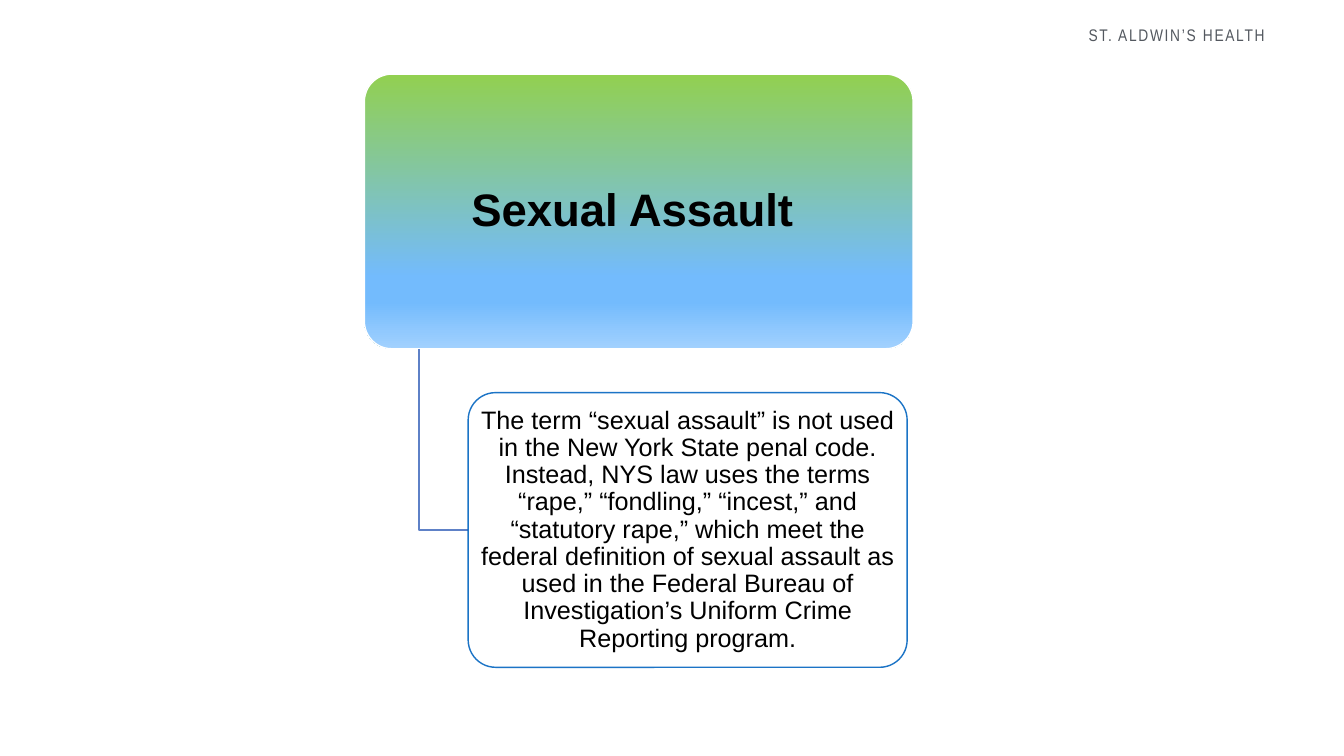
from dataclasses import dataclass

from lxml import etree
from pptx import Presentation
from pptx import util as u
from pptx.dml.color import RGBColor
from pptx.enum import shapes, text
from pptx.oxml.ns import qn


@dataclass(frozen=True)
class Theme:
    black: str = "000000"
    white: str = "FFFFFF"
    grey: str = "53585F"
    link: str = "5E81C7"
    outline: str = "0365C0"
    gradient: tuple = ((0, "92D050"), (74, "73BBFD"), (83, "73BBFD"), (100, "A2D1FE"))
    body_font: str = "Arial"
    header_font: str = "Arial Narrow"
    header_size: int = 24
    title_size: int = 65
    body_size: int = 36
    line_width: int = 2
    opacity: int = 90


THEME = Theme()


def set_values(target, values):
    for name, value in values.items():
        setattr(target, name, value)


def write_text(shape, words, color, align, insets, spacing=1.0, **font):
    """Fill a shape with one vertically centred paragraph."""
    frame = shape.text_frame
    side, edge = map(u.Inches, insets)
    set_values(frame, {
        "word_wrap": True, "vertical_anchor": text.MSO_ANCHOR.MIDDLE,
        "margin_left": side, "margin_right": side,
        "margin_top": edge, "margin_bottom": edge,
    })
    para = frame.paragraphs[0]
    set_values(para, {"alignment": align, "line_spacing": spacing})
    span = para.add_run()
    span.text = words
    set_values(span.font, font)
    span.font.color.rgb = RGBColor.from_string(color)
    return span


def set_line(shape, color):
    shape.line.color.rgb = RGBColor.from_string(color)
    shape.line.width = u.Pt(THEME.line_width)


def add_card(page, left, top, width, height, line_color):
    card = page.shapes.add_shape(
        shapes.MSO_SHAPE.ROUNDED_RECTANGLE, *map(u.Inches, (left, top, width, height)))
    card.adjustments[0] = 0.1
    card.shadow.inherit = False
    set_line(card, line_color)
    return card


def fill_gradient(shape, stops):
    """Vertical gradient, top to bottom, with any number of stops."""
    shape.fill.gradient()
    shape.fill.gradient_angle = 270
    stop_list = shape._element.spPr.find(".//" + qn("a:gsLst"))
    for stop in list(stop_list):
        stop_list.remove(stop)
    for percent, color in stops:
        stop = etree.SubElement(stop_list, qn("a:gs"), pos=str(percent * 1000))
        etree.SubElement(stop, qn("a:srgbClr"), val=color)


def fade(shape, percent):
    """Make the solid fill and the line slightly transparent."""
    for color in shape._element.spPr.iter(qn("a:srgbClr")):
        etree.SubElement(color, qn("a:alpha"), val=str(percent * 1000))


def add_elbow(page, *points):
    start, *rest = [tuple(map(u.Inches, point)) for point in points]
    builder = page.shapes.build_freeform(*start)
    builder.add_line_segments(rest, close=False)
    elbow = builder.convert_to_shape()
    elbow.fill.background()
    elbow.shadow.inherit = False
    set_line(elbow, THEME.link)


def add_header(page, words):
    box = page.shapes.add_textbox(*map(u.Inches, (20.75, 0.14, 4.41, 1.11)))
    span = write_text(box, words, THEME.grey, text.PP_ALIGN.RIGHT, (0.06, 0.06),
                      name=THEME.header_font, size=u.Pt(THEME.header_size))
    span.font._element.set("spc", "240")


def main():
    deck = Presentation()
    set_values(deck, {"slide_width": u.Inches(26.67), "slide_height": u.Inches(15)})
    page = deck.slides.add_slide(deck.slide_layouts[6])
    center = text.PP_ALIGN.CENTER

    add_header(page, "ST. ALDWIN’S HEALTH")

    # Term; the trailing space is part of its centring
    left, top, width, height = 7.23, 1.47, 10.89, 5.45
    term = add_card(page, left, top, width, height, THEME.white)
    fill_gradient(term, THEME.gradient)
    write_text(term, "Sexual Assault ", THEME.black, center, (0.14, 0.09), 0.9,
               name=THEME.body_font, size=u.Pt(THEME.title_size), bold=True)

    # Elbow from the term down to the middle of the definition
    detail_left, detail_top = 9.29, 7.79
    stem, middle = left + width / 10, detail_top + height / 2
    add_elbow(page, (stem, top + height), (stem, middle), (detail_left, middle))

    # Definition
    detail = add_card(page, detail_left, detail_top, width * 0.8, height, THEME.outline)
    detail.fill.solid()
    detail.fill.fore_color.rgb = RGBColor.from_string(THEME.white)
    fade(detail, THEME.opacity)
    write_text(
        detail,
        "The term “sexual assault” is not used in the New York State penal code. "
        "Instead, NYS law uses the terms “rape,” “fondling,” “incest,” and "
        "“statutory rape,” which meet the federal definition of sexual assault as "
        "used in the Federal Bureau of Investigation’s Uniform Crime Reporting program.",
        THEME.black, center, (0.07, 0.05), 0.9,
        name=THEME.body_font, size=u.Pt(THEME.body_size))

    deck.save("out.pptx")


if __name__ == "__main__":
    main()
